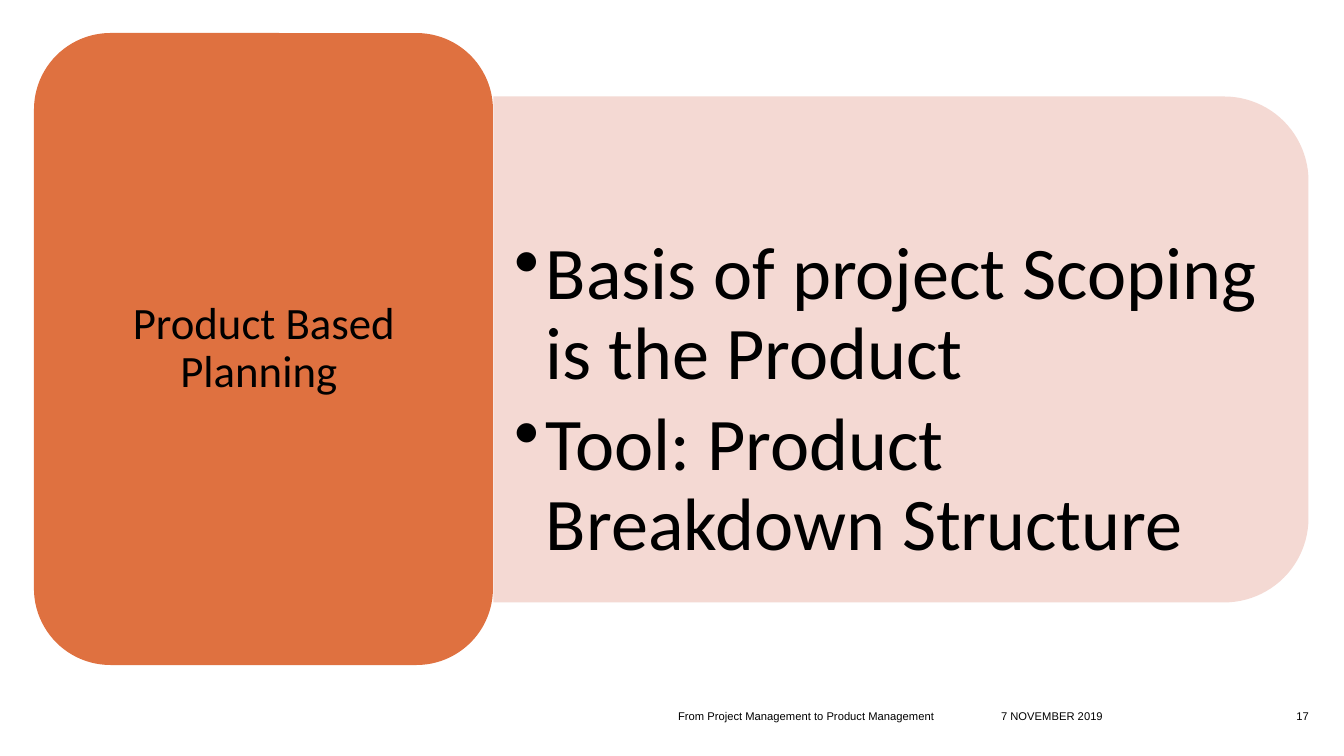
from pptx import Presentation
from pptx.dml.color import RGBColor
from pptx.enum.shapes import MSO_SHAPE
from pptx.enum.text import MSO_ANCHOR, MSO_AUTO_SIZE, PP_ALIGN
from pptx.oxml.ns import qn
from pptx.util import Pt
from lxml import etree

PX = 914400 / 100.8
ORANGE = RGBColor(0xDF, 0x71, 0x40)
PINK = RGBColor(0xF3, 0xD5, 0xCF)
BLACK = RGBColor(0x00, 0x00, 0x00)
LEFT, CENTER, RIGHT = PP_ALIGN.LEFT, PP_ALIGN.CENTER, PP_ALIGN.RIGHT
MIDDLE, BOTTOM = MSO_ANCHOR.MIDDLE, MSO_ANCHOR.BOTTOM
ROUND_TOP, ROUNDED = MSO_SHAPE.ROUND_2_SAME_RECTANGLE, MSO_SHAPE.ROUNDED_RECTANGLE


def px(*lengths):
    return [round(length * PX) for length in lengths]


def format_text(shape, lines, font_name, size, align, anchor, inset_x, inset_y):
    frame = shape.text_frame
    frame.text = "\n".join(lines)
    frame.word_wrap = True
    frame.auto_size = MSO_AUTO_SIZE.NONE
    frame.vertical_anchor = anchor
    frame.margin_left, frame.margin_right = px(inset_x, inset_x)
    frame.margin_top, frame.margin_bottom = px(inset_y, inset_y)
    for paragraph in frame.paragraphs:
        paragraph.alignment = align
        for run in paragraph.runs:
            run.font.name = font_name
            run.font.size = Pt(size)
            run.font.color.rgb = BLACK


presentation = Presentation()
presentation.slide_width, presentation.slide_height = px(1344, 756)
slide = presentation.slides.add_slide(presentation.slide_layouts[5])
shapes = slide.shapes

# Panels: the pink one is turned so its rounded side faces right
panels = [
    (ROUND_TOP, (648, -58, 506, 815), 90, PINK),
    (ROUNDED, (34, 33, 459, 632), 0, ORANGE),
]
for kind, box, rotation, color in panels:
    panel = shapes.add_shape(kind, *px(*box))
    panel.rotation = rotation
    panel.shadow.inherit = False
    panel.fill.solid()
    panel.fill.fore_color.rgb = color
    panel.line.fill.background()
    if color == PINK:
        color_element = panel.fill._xPr.find(qn("a:solidFill"))[0]
        etree.SubElement(color_element, qn("a:alpha"), val="90000")

# Title, brought in front of the orange panel
title = shapes.title
title.left, title.top, title.width, title.height = px(57, 55, 414, 588)
format_text(title, ["Product Based Planning "], "Calibri", 32, CENTER, MIDDLE, 13, 7)
title.text_frame.paragraphs[0].line_spacing = 0.9
shapes._spTree.append(title._element)

# Bullets
points = ["Basis of project Scoping is the Product", "Tool: Product Breakdown Structure"]
bullet_box = shapes.add_textbox(*px(493, 121, 791, 457))
format_text(bullet_box, points, "Calibri", 53, LEFT, BOTTOM, 22, 11)
indent = px(31)[0]
for paragraph in bullet_box.text_frame.paragraphs:
    paragraph.line_spacing = 0.9
    paragraph.space_after = Pt(8)
    properties = paragraph._p.get_or_add_pPr()
    properties.set("marL", str(indent))
    properties.set("indent", str(-indent))
    etree.SubElement(properties, qn("a:buChar"), char="•")

# Footer
footer = [
    ("From Project Management to Product Management", 678, 308, LEFT),
    ("7 NOVEMBER 2019", 1001, 201, LEFT),
    ("17", 1264, 45, RIGHT),
]
for text, left, width, align in footer:
    footer_box = shapes.add_textbox(*px(left, 701, width, 22))
    format_text(footer_box, [text], "Arial", 8, align, BOTTOM, 0, 0)

presentation.save("out.pptx")
